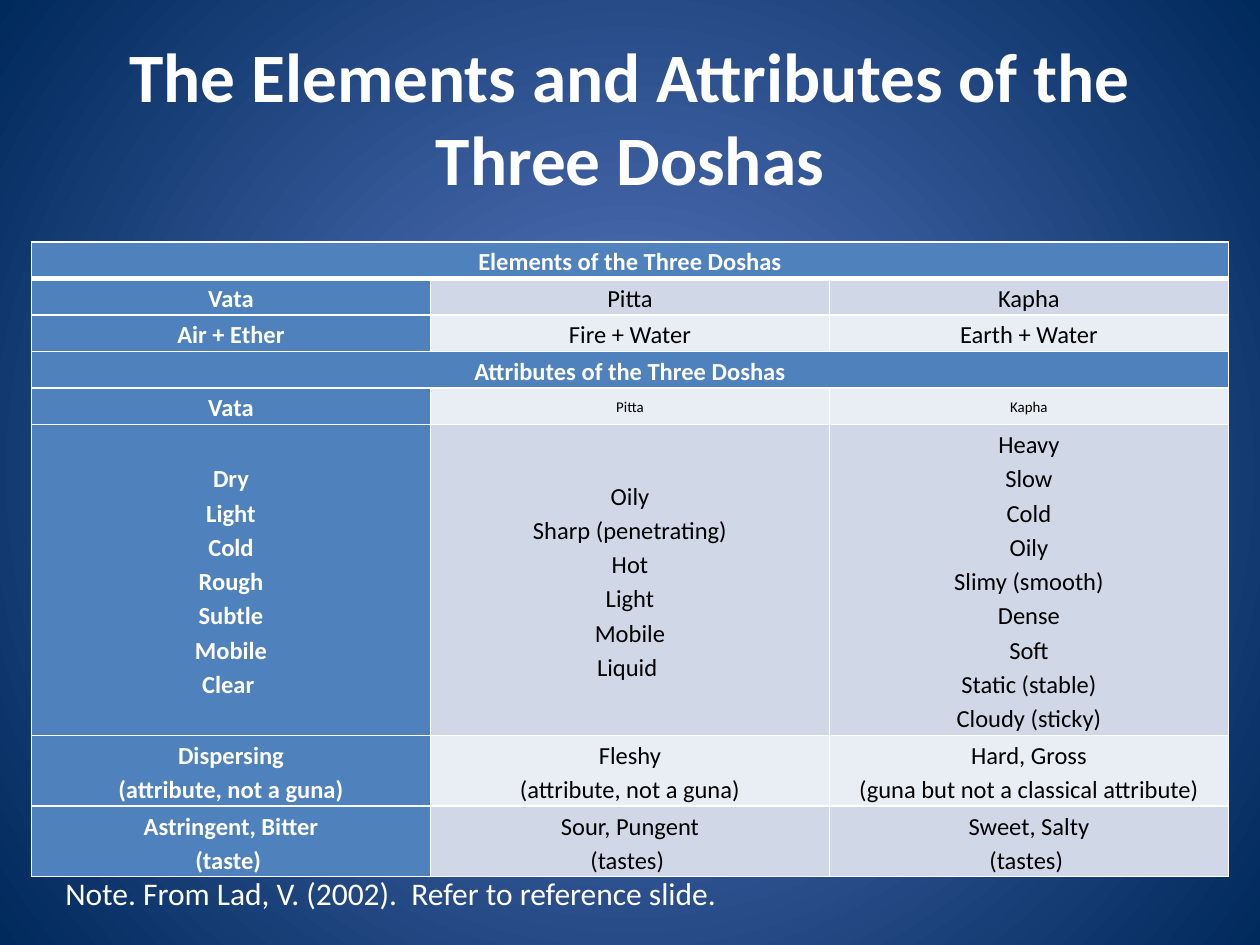
from lxml.etree import SubElement
from pptx import Presentation
from pptx.dml.color import RGBColor
from pptx.enum.text import MSO_ANCHOR as Anchor, PP_ALIGN as Align
from pptx.oxml.ns import qn
from pptx.util import Inches, Pt

COLORS = {
    "white": "FFFFFF", "black": "000000", "header": "4F81BD",
    "band_dark": "D0D8E8", "band_light": "E9EDF4",
    "glow": "5E7CC5", "edge": "00295C",
}
FONT = "Calibri"
CENTER_FOCUS = {"l": "50000", "t": "50000", "r": "50000", "b": "50000"}

ROW_HEIGHTS = [0.29] * 5 + [2.47, 0.56, 0.56]
# A row with one entry spans the whole table
DOSHA_ROWS = [
    ["Elements of the Three Doshas"],
    ["Vata", "Pitta", "Kapha"],
    ["Air + Ether", "Fire + Water", "Earth + Water"],
    ["Attributes of the Three Doshas"],
    ["Vata", "Pitta", "Kapha"],
    ["Dry\nLight\nCold\nRough\nSubtle\nMobile\nClear ",
     "Oily\nSharp (penetrating)\nHot\nLight\nMobile\nLiquid ",
     "Heavy\nSlow\nCold\nOily\nSlimy (smooth)\nDense\nSoft\n"
     "Static (stable)\nCloudy (sticky)"],
    ["Dispersing\n(attribute, not a guna)",
     "Fleshy\n(attribute, not a guna)",
     "Hard, Gross\n(guna but not a classical attribute)"],
    ["Astringent, Bitter\n(taste) ", "Sour, Pungent\n(tastes) ",
     "Sweet, Salty\n(tastes) "],
]
SMALL_ROW = 4


def rgb(name):
    return RGBColor.from_string(COLORS[name])


def write_text(frame, text, size=14, color="white", bold=False,
               align=Align.LEFT, spacing=None):
    """Fill a text frame, one paragraph per line of text."""
    frame.word_wrap = True
    for i, line in enumerate(text.split("\n")):
        paragraph = frame.add_paragraph() if i else frame.paragraphs[0]
        paragraph.alignment = align
        if spacing:
            paragraph.line_spacing = spacing
        run = paragraph.add_run()
        run.text = line
        run.font.name, run.font.size, run.font.bold = FONT, Pt(size), bold
        run.font.color.rgb = rgb(color)


def set_borders(cell, bottom=1, top=1):
    """Draw white cell borders; they must precede the cell fill."""
    props = cell._tc.get_or_add_tcPr()
    for side, width in (("L", 1), ("R", 1), ("T", top), ("B", bottom)):
        line = SubElement(props, qn(f"a:ln{side}"), w=str(Pt(width)))
        fill = SubElement(line, qn("a:solidFill"))
        SubElement(fill, qn("a:srgbClr"), val=COLORS["white"])


def paint_background(slide):
    fill = slide.background.fill
    fill.gradient()
    for stop, position, color in zip(fill.gradient_stops, (0, 1),
                                     ("glow", "edge")):
        stop.position = position
        stop.color.rgb = rgb(color)
    # Turn the linear gradient into a circular one
    gradient = slide.background._cSld.find(".//" + qn("a:gradFill"))
    gradient.remove(gradient.find(qn("a:lin")))
    circle = SubElement(gradient, qn("a:path"), path="circle")
    SubElement(circle, qn("a:fillToRect"), **CENTER_FOCUS)


def add_text_box(slide, left, top, width, height, text, anchor=Anchor.TOP,
                 **text_format):
    box = slide.shapes.add_textbox(Inches(left), Inches(top),
                                   Inches(width), Inches(height))
    box.text_frame.vertical_anchor = anchor
    write_text(box.text_frame, text, **text_format)


def add_dosha_table(slide, left, top, width):
    columns = max(len(entries) for entries in DOSHA_ROWS)
    table = slide.shapes.add_table(
        len(DOSHA_ROWS), columns, Inches(left), Inches(top),
        Inches(width), Inches(sum(ROW_HEIGHTS))).table
    table.first_col = True
    for column in table.columns:
        column.width = Inches(width / columns)

    for r, entries in enumerate(DOSHA_ROWS):
        table.rows[r].height = Inches(ROW_HEIGHTS[r])
        band = "band_dark" if r % 2 else "band_light"
        spans = len(entries) == 1
        if spans:
            table.cell(r, 0).merge(table.cell(r, columns - 1))
        for c in range(columns):
            cell = table.cell(r, c)
            is_header = c == 0 or spans
            set_borders(cell, bottom=3 if r == 0 else 1,
                        top=3 if r == 1 else 1)
            cell.fill.solid()
            cell.fill.fore_color.rgb = rgb("header" if is_header else band)
            cell.vertical_anchor = Anchor.MIDDLE
            cell.margin_left = cell.margin_right = Inches(0.01)
            cell.margin_top = cell.margin_bottom = Inches(0.01)
            if c < len(entries):
                write_text(cell.text_frame, entries[c],
                           size=8.5 if r == SMALL_ROW and c else 14,
                           color="white" if is_header else "black",
                           bold=is_header, align=Align.CENTER, spacing=1.15)
            else:
                # Keep the merged-away cells from stretching the row
                cell.text_frame.paragraphs[0].font.size = Pt(8)


def main():
    deck = Presentation()
    deck.slide_width, deck.slide_height = Inches(10), Inches(7.5)
    slide = deck.slides.add_slide(deck.slide_layouts[6])
    paint_background(slide)
    # Title
    add_text_box(slide, 0.5, 0.3, 9, 1.25,
                 "The Elements and Attributes of the Three Doshas",
                 anchor=Anchor.MIDDLE, size=39.6, bold=True,
                 align=Align.CENTER)
    # Table of elements and attributes
    add_dosha_table(slide, 0.25, 1.92, 9.5)
    # Source note
    add_text_box(slide, 0.42, 6.89, 8.83, 0.4,
                 "Note. From Lad, V. (2002).  Refer to reference slide.",
                 size=18)
    deck.save("out.pptx")


if __name__ == "__main__":
    main()
